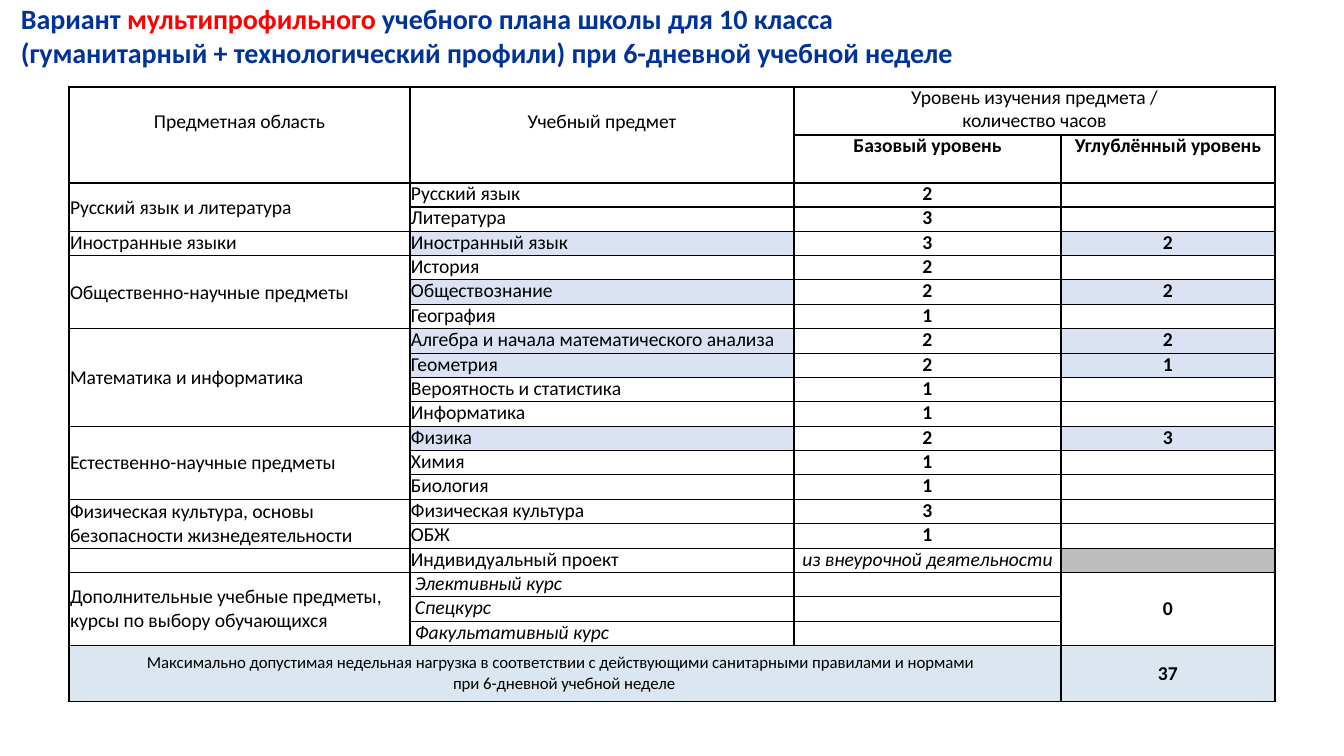
from dataclasses import dataclass
from itertools import pairwise

from lxml.etree import SubElement
from pptx import Presentation
from pptx.dml.color import RGBColor
from pptx.enum.text import MSO_ANCHOR, MSO_AUTO_SIZE, PP_ALIGN
from pptx.oxml import parse_xml
from pptx.oxml.ns import nsdecls, qn
from pptx.util import Emu, Pt

EMU_PER_PX = 914400 / 100.8
TITLE_ONLY = 5


@dataclass(frozen=True)
class Theme:
    font: str = "Calibri"
    navy: str = "003399"
    red: str = "FF0000"
    black: str = "000000"
    white: str = "FFFFFF"
    profile: str = "DAE2F3"
    total: str = "DCE6F0"
    blocked: str = "BEBEBE"
    title_size: float = 20
    body_size: float = 14
    note_size: float = 12
    line_pitch: float = 16.4
    border: float = 1
    tracking: int = -5


def px(length):
    return Emu(round(length * EMU_PER_PX))


class Page:
    def __init__(self, deck, theme):
        self.theme = theme
        self.slide = deck.slides.add_slide(deck.slide_layouts[TITLE_ONLY])

    def add_span(self, para, text, size=None, color=None, bold=False, italic=False):
        span = para.add_run()
        span.text = text
        font = span.font
        font.name = self.theme.font
        font.size = Pt(size or self.theme.body_size)
        font.bold, font.italic = bold, italic
        font.color.rgb = RGBColor.from_string(color or self.theme.black)
        font._element.set("spc", str(self.theme.tracking))

    def add_title(self, left, top, width, height, lines):
        """Each line is a list of (text, color) spans."""
        title = self.slide.shapes.title
        title.left, title.top, title.width, title.height = map(
            px, (left, top, width, height))
        frame = title.text_frame
        frame.word_wrap = True
        frame.auto_size = MSO_AUTO_SIZE.NONE
        frame.vertical_anchor = MSO_ANCHOR.TOP
        frame.margin_left = frame.margin_top = frame.margin_bottom = 0
        frame.margin_right = px(1)
        for number, line in enumerate(lines):
            para = frame.add_paragraph() if number else frame.paragraphs[0]
            para.alignment = PP_ALIGN.LEFT
            para.space_before = Pt(0.5 if number else 1)
            for text, color in line:
                self.add_span(para, text, self.theme.title_size, color, bold=True)

    def add_table(self, left, top, widths, heights):
        frame = self.slide.shapes.add_table(
            len(heights), len(widths), px(left), px(top),
            px(sum(widths)), px(sum(heights)))
        table = frame.table
        table.first_row = table.horz_banding = False
        for column, width in zip(table.columns, widths):
            column.width = px(width)
        for row, height in zip(table.rows, heights):
            row.height = px(height)
            for cell in row.cells:
                self.format_cell(cell)
        return table

    def format_cell(self, cell):
        cell.margin_left = cell.margin_right = 0
        cell.margin_top = cell.margin_bottom = 0
        para = cell.text_frame.paragraphs[0]
        para.line_spacing = Pt(self.theme.line_pitch)
        # Blank cells take their minimum height from this size.
        para._p.get_or_add_endParaRPr().set("sz", str(self.theme.note_size * 100))
        self.fill_cell(cell, self.theme.white)
        properties = cell._tc.get_or_add_tcPr()
        for position, side in enumerate(("lnL", "lnR", "lnT", "lnB")):
            line = parse_xml(f'<a:{side} {nsdecls("a")} w="{Pt(self.theme.border)}"/>')
            fill = SubElement(line, qn("a:solidFill"))
            SubElement(fill, qn("a:srgbClr"), val=self.theme.black)
            properties.insert(position, line)

    def fill_cell(self, cell, color):
        cell.fill.solid()
        cell.fill.fore_color.rgb = RGBColor.from_string(color)

    def write_cell(self, cell, lines, center=False, middle=False, indent=0,
                   above=0, **style):
        cell.vertical_anchor = MSO_ANCHOR.MIDDLE if middle else MSO_ANCHOR.TOP
        cell.margin_left, cell.margin_top = px(indent), px(above)
        frame = cell.text_frame
        for number, text in enumerate(lines):
            para = frame.add_paragraph() if number else frame.paragraphs[0]
            para.alignment = PP_ALIGN.CENTER if center else PP_ALIGN.LEFT
            para.line_spacing = 1.0 if middle else Pt(self.theme.line_pitch)
            self.add_span(para, text, **style)

    def write_hanging(self, cell, lines, first, rest, size):
        """Lines in one paragraph: the first starts at first px, the others at rest px."""
        cell.vertical_anchor = MSO_ANCHOR.MIDDLE
        para = cell.text_frame.paragraphs[0]
        para.alignment = PP_ALIGN.LEFT
        para.line_spacing = 1.0
        properties = para._p.get_or_add_pPr()
        properties.set("marL", str(px(rest)))
        properties.set("indent", str(px(first - rest)))
        for number, text in enumerate(lines):
            if number:
                para.add_line_break()
            self.add_span(para, text, size)


# (area lines, [(subject, basic hours, advanced hours)])
AREAS = [
    (["Русский язык и литература"],
     [("Русский язык", "2", ""), ("Литература", "3", "")]),
    (["Иностранные языки"], [("Иностранный язык", "3", "2")]),
    (["Общественно-научные предметы"],
     [("История", "2", ""), ("Обществознание", "2", "2"), ("География", "1", "")]),
    (["Математика и информатика"],
     [("Алгебра и начала математического анализа", "2", "2"),
      ("Геометрия", "2", "1"), ("Вероятность и статистика", "1", ""),
      ("Информатика", "1", "")]),
    (["Естественно-научные предметы"],
     [("Физика", "2", "3"), ("Химия", "1", ""), ("Биология", "1", "")]),
    (["Физическая культура, основы", "безопасности жизнедеятельности"],
     [("Физическая культура", "3", ""), ("ОБЖ", "1", "")]),
]
ELECTIVES = ["Элективный курс", "Спецкурс", "Факультативный курс"]
HEADER_ROWS = 2
SUBJECT_ROWS = sum(len(subjects) for _, subjects in AREAS) + 1 + len(ELECTIVES)
SUBJECT_HEIGHT = 463


def write_header(page, table):
    for column, text in enumerate(("Предметная область", "Учебный предмет")):
        table.cell(0, column).merge(table.cell(1, column))
        page.write_cell(table.cell(0, column), [text], center=True, above=24)
    table.cell(0, 2).merge(table.cell(0, 3))
    page.write_cell(table.cell(0, 2),
                    ["Уровень изучения предмета /", "количество часов"], center=True)
    for column, text in enumerate(("Базовый уровень", "Углублённый уровень"), 2):
        page.write_cell(table.cell(1, column), [text], center=True, bold=True)


def write_areas(page, table):
    """Returns the first row below the areas."""
    row = HEADER_ROWS
    for area, subjects in AREAS:
        last = row + len(subjects) - 1
        if last > row:
            table.cell(row, 0).merge(table.cell(last, 0))
        page.write_cell(table.cell(row, 0), area, middle=last > row, indent=1)
        for subject, basic, advanced in subjects:
            page.write_cell(table.cell(row, 1), [subject], indent=1)
            page.write_cell(table.cell(row, 2), [basic], center=True, bold=True)
            if advanced:
                page.write_cell(table.cell(row, 3), [advanced], center=True, bold=True)
                for column in (1, 3):
                    page.fill_cell(table.cell(row, column), page.theme.profile)
            row += 1
    return row


def write_extras(page, table, project):
    theme = page.theme
    page.write_cell(table.cell(project, 1), ["Индивидуальный проект"], indent=1)
    page.write_cell(table.cell(project, 2), ["из внеурочной деятельности"],
                    center=True, italic=True)
    page.fill_cell(table.cell(project, 3), theme.blocked)

    first, total = project + 1, project + 1 + len(ELECTIVES)
    for column in (0, 3):
        table.cell(first, column).merge(table.cell(total - 1, column))
    page.write_cell(table.cell(first, 0),
                    ["Дополнительные учебные предметы,", "курсы по выбору обучающихся"],
                    middle=True, indent=1)
    page.write_cell(table.cell(first, 3), ["0"], center=True, middle=True, bold=True)
    for row, course in enumerate(ELECTIVES, first):
        page.write_cell(table.cell(row, 1), [course], indent=5, italic=True)

    table.cell(total, 0).merge(table.cell(total, 2))
    page.write_hanging(
        table.cell(total, 0),
        ["Максимально допустимая недельная нагрузка в соответствии с действующими "
         "санитарными правилами и нормами", "при 6-дневной учебной неделе"],
        first=78, rest=384, size=theme.note_size)
    page.write_cell(table.cell(total, 3), ["37"], center=True, middle=True, bold=True)
    for column in range(4):
        page.fill_cell(table.cell(total, column), theme.total)


def main():
    deck = Presentation()
    deck.slide_width, deck.slide_height = px(1344), px(756)
    theme = Theme()
    page = Page(deck, theme)
    page.add_title(21, 1, 1306, 71, [
        [("Вариант ", theme.navy), ("мультипрофильного ", theme.red),
         ("учебного плана школы для 10 класса", theme.navy)],
        [("(гуманитарный + технологический профили) при 6-дневной учебной неделе",
          theme.navy)],
    ])
    edges = [round(SUBJECT_HEIGHT * i / SUBJECT_ROWS) for i in range(SUBJECT_ROWS + 1)]
    subject_heights = [below - above for above, below in pairwise(edges)]
    table = page.add_table(69, 87, [341, 384, 267, 214],
                           [48] * HEADER_ROWS + subject_heights + [56])
    write_header(page, table)
    write_extras(page, table, write_areas(page, table))
    deck.save("out.pptx")


if __name__ == "__main__":
    main()
